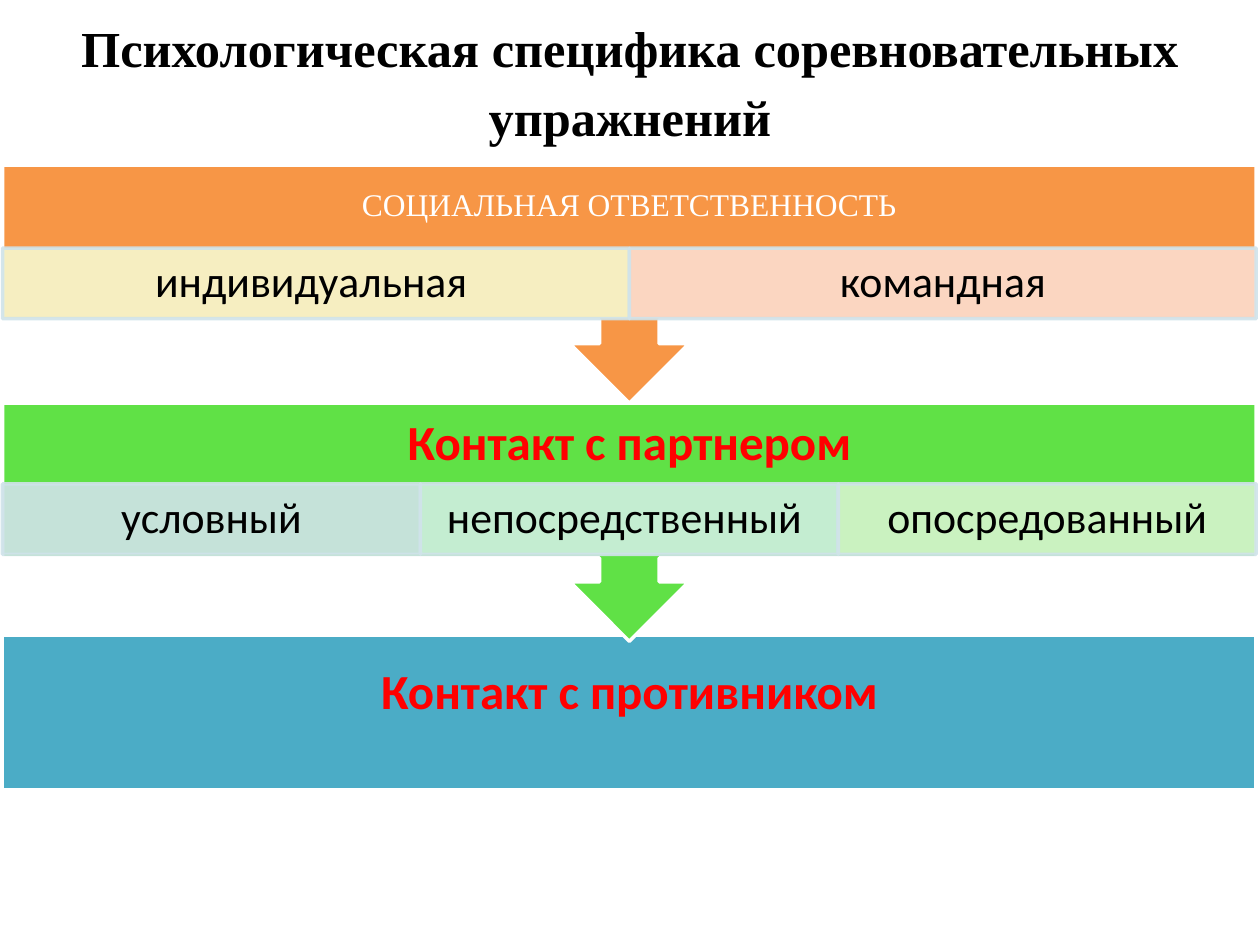
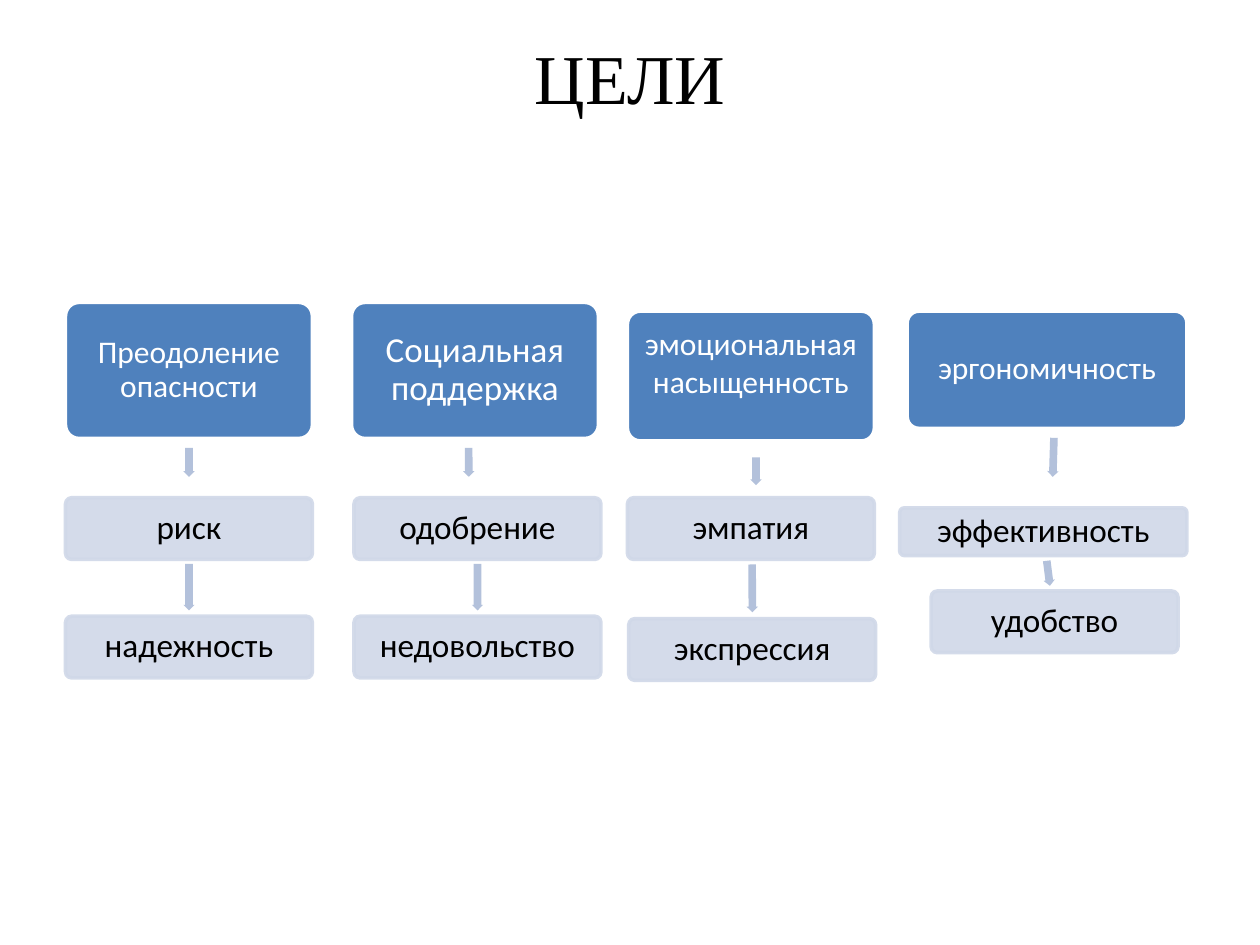
import pptx
import pptx.util
import pptx.dml.color
import pptx.enum.shapes
import pptx.enum.text
import pptx.oxml
import pptx.oxml.ns

Inches = pptx.util.Inches
SHAPE = pptx.enum.shapes.MSO_SHAPE

WHITE, BLACK, RED = "FFFFFF", "000000", "FF0000"
SERIF, SANS = "Times New Roman", "Calibri"
GOAL_BLUE, STEP_BLUE, ARROW_BLUE, CELL_LINE = "4F81BD", "D0D8E8", "B3C1DB", "D0E3EA"

BAND_LEFT, BAND_WIDTH = 0.02, 9.95
CALLOUT_HEIGHT, CALLOUT_BODY, HEAD_HEIGHT, CELL_HEIGHT = 1.89, 1.23, 0.66, 0.56
BAND_FONT = {"size": 28, "name": SANS, "bold": True, "color": RED}
CELL_FONT = {"size": 25, "name": SANS, "color": BLACK}
STEP_FONT = {"size": 19, "name": SANS, "color": BLACK}

TITLES = [
    {"text": "Психологическая специфика соревновательных упражнений",
     "box": (0.5, 0, 9, 1.23), "spacing": 1.15, "after": 10,
     "font": {"size": 28.8, "name": SERIF, "bold": True, "color": BLACK}},
    {"text": "ЦЕЛИ", "box": (0.5, 0.3, 9, 0.61), "spacing": 1, "after": 0,
     "font": {"size": 40, "name": SERIF, "bold": False, "color": BLACK}},
]

# Each callout: top, colour, heading, heading font, top of cells, cells
CALLOUTS = [
    (1.31, "F79646", "СОЦИАЛЬНАЯ ОТВЕТСТВЕННОСТЬ",
     {"size": 18, "name": SERIF, "color": WHITE}, 1.97,
     [("индивидуальная ", "F6F8CF"), ("командная", "FCDDCF")]),
    (3.2, "60E146", "Контакт с партнером", BAND_FONT, 3.84,
     [("условный", "D0E3EA"), ("непосредственный ", "CFEFE1"),
      ("опосредованный", "D6F4CE")]),
]
LAST_BAND = ("Контакт с противником", 5.04, 1.23, "4BACC6")

# Goal: text, box, size, line spacing, extra room below.
# Steps: text, box. Arrows: centre x, centre y, length, angle.
GOALS = [
    {"goal": ("Преодоление опасности", (0.52, 2.4, 1.96, 1.08), 18, 0.9, 0),
     "steps": [("риск", (0.52, 3.95, 1.96, 0.49)),
               ("надежность", (0.52, 4.89, 1.96, 0.49))],
     "arrows": [(1.5, 3.67, 0.23, 90), (1.5, 4.66, 0.37, 90)]},
    {"goal": ("Социальная поддержка", (2.79, 2.4, 1.96, 1.08), 20, 0.9, 0),
     "steps": [("одобрение", (2.81, 3.95, 1.96, 0.49)),
               ("недовольство", (2.81, 4.89, 1.96, 0.49))],
     "arrows": [(3.72, 3.67, 0.23, 89.4), (3.79, 4.66, 0.37, 90)]},
    {"goal": ("эмоциональная\vнасыщенность", (4.98, 2.47, 1.96, 1.03), 18, 1, 0.23),
     "steps": [("эмпатия", (4.98, 3.95, 1.96, 0.49)),
               ("экспрессия", (4.99, 4.91, 1.96, 0.49))],
     "arrows": [(6, 3.74, 0.22, 90), (5.97, 4.67, 0.38, 89.6)]},
    {"goal": ("эргономичность", (7.2, 2.47, 2.22, 0.93), 18, 0.9, 0),
     "steps": [("эффективность", (7.14, 4.03, 2.28, 0.38)),
               ("удобство", (7.39, 4.69, 1.96, 0.49))],
     "arrows": [(8.36, 3.63, 0.31, 91.7), (8.32, 4.55, 0.2, 82.8)]},
]


def rgb(color):
    return pptx.dml.color.RGBColor.from_string(color)


def set_alpha(sp, percent):
    """Make the solid fill and the outline partly transparent."""
    for clr in sp._element.spPr.iter(pptx.oxml.ns.qn("a:srgbClr")):
        alpha = pptx.oxml.parse_xml(
            f'<a:alpha {pptx.oxml.ns.nsdecls("a")} val="{percent * 1000}"/>')
        clr.append(alpha)


def write(tf, text, font, spacing=0.9, after=0, insets=(0.03, 0.03, 0.03, 0.03)):
    """Fill a text frame; insets run left, top, right, bottom."""
    tf.text = text
    tf.word_wrap = True
    tf.auto_size = pptx.enum.text.MSO_AUTO_SIZE.NONE
    tf.vertical_anchor = pptx.enum.text.MSO_ANCHOR.MIDDLE
    for side, inset in zip(("left", "top", "right", "bottom"), insets):
        setattr(tf, f"margin_{side}", Inches(inset))
    p = tf.paragraphs[0]
    p.alignment = pptx.enum.text.PP_ALIGN.CENTER
    p.line_spacing = spacing
    p.space_after = pptx.util.Pt(after)
    for r in p.runs:
        for key, value in font.items():
            if key == "color":
                r.font.color.rgb = rgb(value)
            else:
                setattr(r.font, key, pptx.util.Pt(value) if key == "size" else value)


def add_box(slide, kind, box, fill, line=None, alpha=None, adjustments=()):
    sp = slide.shapes.add_shape(kind, *map(Inches, box))
    sp.shadow.inherit = False
    sp.fill.solid()
    sp.fill.fore_color.rgb = rgb(fill)
    if line:
        sp.line.color.rgb = rgb(line)
        sp.line.width = pptx.util.Pt(2)
    else:
        sp.line.fill.background()
    for i, value in enumerate(adjustments):
        sp.adjustments[i] = value
    if alpha:
        set_alpha(sp, alpha)
    return sp


def add_titled_slide(prs, title):
    slide = prs.slides.add_slide(prs.slide_layouts[5])
    sp = slide.shapes.title
    sp.left, sp.top, sp.width, sp.height = map(Inches, title["box"])
    write(sp.text_frame, title["text"], title["font"], title["spacing"],
          title["after"], (0.1, 0.05, 0.1, 0.05))
    return slide


def add_callout(slide, top, color, heading, font, cells_top, cells):
    sp = add_box(slide, SHAPE.DOWN_ARROW_CALLOUT,
                 (BAND_LEFT, top, BAND_WIDTH, CALLOUT_HEIGHT), color, WHITE)
    write(sp.text_frame, heading, font,
          insets=(0.2, 0, 0.2, CALLOUT_BODY - HEAD_HEIGHT))
    width = BAND_WIDTH / len(cells)
    for i, (text, fill) in enumerate(cells):
        box = (BAND_LEFT + i * width, cells_top, width, CELL_HEIGHT)
        cell = add_box(slide, SHAPE.RECTANGLE, box, fill, CELL_LINE, 90)
        write(cell.text_frame, text, CELL_FONT, insets=(0.19, 0.03, 0.19, 0.03))


def add_goal_column(slide, column):
    text, box, size, spacing, room = column["goal"]
    sp = add_box(slide, SHAPE.ROUNDED_RECTANGLE, box, GOAL_BLUE, WHITE,
                 adjustments=(0.1,))
    write(sp.text_frame, text, {"size": size, "name": SANS, "color": WHITE},
          spacing, insets=(0.03, 0.03, 0.03, 0.03 + room))
    for (text, box), (x, y, length, angle) in zip(column["steps"], column["arrows"]):
        arrow = add_box(slide, SHAPE.RIGHT_ARROW,
                        (x - length / 2, y - 0.045, length, 0.09), ARROW_BLUE,
                        adjustments=(0.67, 0.5))
        arrow.rotation = angle
        sp = add_box(slide, SHAPE.ROUNDED_RECTANGLE, box, STEP_BLUE, STEP_BLUE,
                     90, (0.1,))
        write(sp.text_frame, text, STEP_FONT)


def main():
    prs = pptx.Presentation()
    prs.slide_width, prs.slide_height = Inches(10), Inches(7.5)
    contact_slide, goals_slide = [add_titled_slide(prs, t) for t in TITLES]

    text, top, height, fill = LAST_BAND
    sp = add_box(contact_slide, SHAPE.RECTANGLE,
                 (BAND_LEFT, top, BAND_WIDTH, height), fill, WHITE)
    write(sp.text_frame, text, BAND_FONT, 1, insets=(0.2, 0.1, 0.2, 0.46))
    for callout in reversed(CALLOUTS):
        add_callout(contact_slide, *callout)

    for column in GOALS:
        add_goal_column(goals_slide, column)
    prs.save("out.pptx")


if __name__ == "__main__":
    main()
